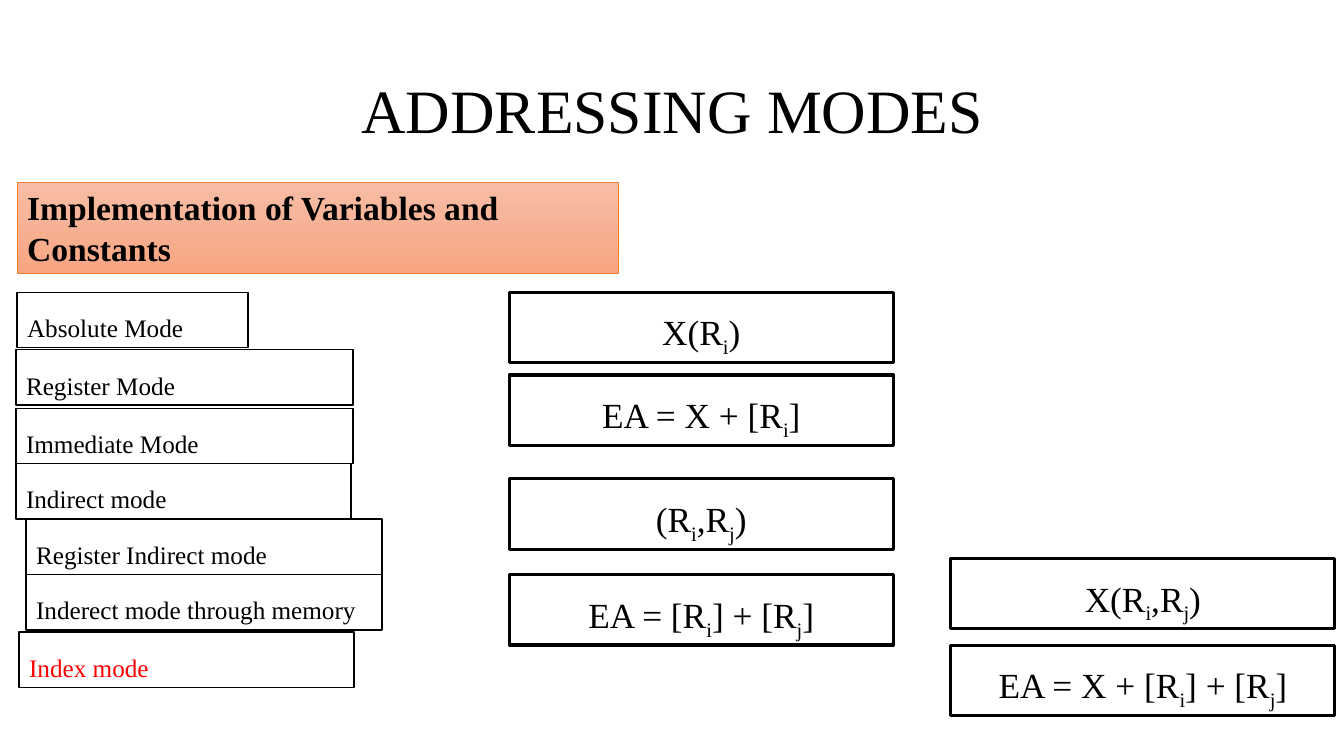
from pptx import Presentation
from pptx.dml.color import RGBColor
from pptx.enum.shapes import MSO_SHAPE as Shape
from pptx.enum.text import MSO_ANCHOR as Anchor, PP_ALIGN as Align
from pptx.util import Pt

EMU_PER_PX = 9144  # 100 px to the inch
FONT = "Times New Roman"
COLORS = {
    "black": "000000",
    "white": "FFFFFF",
    "red": "FF0000",
    "orange": "ED7D31",
    "peach_top": "F7BDA5",
    "peach_bottom": "F8A582",
}


def px(length):
    return length * EMU_PER_PX


def rgb(name):
    return RGBColor.from_string(COLORS[name])


class SlideBuilder:
    def __init__(self, presentation):
        blank = presentation.slide_layouts[6]
        self.slide = presentation.slides.add_slide(blank)

    def style(self, shape, size, color="black", align=Align.LEFT,
              anchor=Anchor.TOP, spacing=1.0, bold=False):
        """Format the text frame of a shape and return its paragraph."""
        frame = shape.text_frame
        frame.word_wrap = True
        frame.vertical_anchor = anchor
        paragraph = frame.paragraphs[0]
        paragraph.alignment = align
        paragraph.line_spacing = spacing
        font = paragraph.font
        font.name, font.size, font.bold = FONT, Pt(size), bold
        font.color.rgb = rgb(color)
        return paragraph

    def box(self, left, top, width, height, line="black", line_width=1):
        shape = self.slide.shapes.add_shape(
            Shape.RECTANGLE, px(left), px(top), px(width), px(height))
        shape.shadow.inherit = False
        shape.line.color.rgb = rgb(line)
        shape.line.width = Pt(line_width)
        return shape

    def title(self, text, left, top, width, height):
        shape = self.slide.shapes.add_textbox(
            px(left), px(top), px(width), px(height))
        paragraph = self.style(shape, 44, align=Align.CENTER,
                               anchor=Anchor.MIDDLE, spacing=0.9)
        paragraph.add_run().text = text

    def banner(self, text, left, top, width, height):
        shape = self.box(left, top, width, height, "orange", 0.5)
        shape.fill.gradient()
        shape.fill.gradient_angle = 270
        stops = shape.fill.gradient_stops
        for stop, color in zip(stops, ("peach_top", "peach_bottom")):
            stop.color.rgb = rgb(color)
        self.style(shape, 24, bold=True).add_run().text = text

    def mode(self, text, left, top, width, color="black"):
        shape = self.box(left, top, width, 55)
        shape.fill.solid()
        shape.fill.fore_color.rgb = rgb("white")
        self.style(shape, 18, color, spacing=1.5).add_run().text = text

    def formula(self, text, left, top):
        """Draw a boxed formula; the letter after each "_" is a subscript."""
        shape = self.box(left, top, 381, 70, line_width=2.25)
        shape.fill.background()
        paragraph = self.style(shape, 25.2, align=Align.CENTER,
                               anchor=Anchor.MIDDLE, spacing=1.3)
        first, *rest = text.split("_")
        paragraph.add_run().text = first
        for part in rest:
            subscript = paragraph.add_run()
            subscript.text = part[0]
            subscript.font._element.set("baseline", "-25000")
            paragraph.add_run().text = part[1:]


MODES = [
    ("Absolute Mode", 17, 290, 229, "black"),
    ("Register Mode", 16, 347, 334, "black"),
    ("Immediate Mode", 16, 405, 334, "black"),
    ("Indirect mode", 16, 460, 332, "black"),
    ("Register Indirect mode", 26, 515, 353, "black"),
    ("Inderect mode through memory", 26, 570, 353, "black"),
    ("Index mode", 19, 627, 332, "red"),
]
FORMULAS = [
    ("X(R_i)", 505, 290),
    ("EA = X + [R_i]", 505, 372),
    ("(R_i,R_j)", 505, 475),
    ("EA = [R_i] + [R_j]", 505, 570),
    ("X(R_i,R_j)", 943, 554),
    ("EA = X + [R_i] + [R_j]", 943, 640),
]


def main():
    presentation = Presentation()
    presentation.slide_width = px(1333)
    presentation.slide_height = px(750)
    builder = SlideBuilder(presentation)
    builder.title("ADDRESSING MODES", 92, 40, 1150, 145)
    builder.banner("Implementation of Variables and Constants",
                   17, 181, 596, 90)
    for mode in MODES:
        builder.mode(*mode)
    for formula in FORMULAS:
        builder.formula(*formula)
    presentation.save("out.pptx")


if __name__ == "__main__":
    main()
